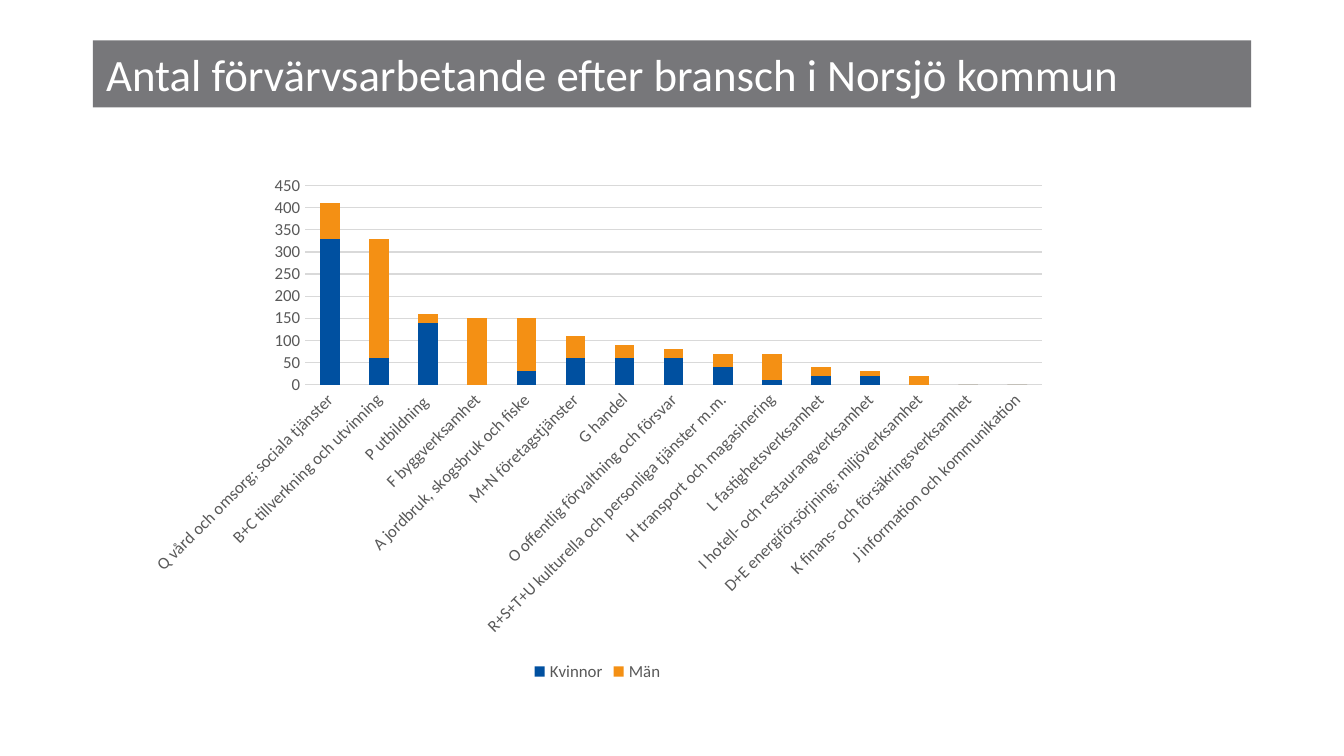
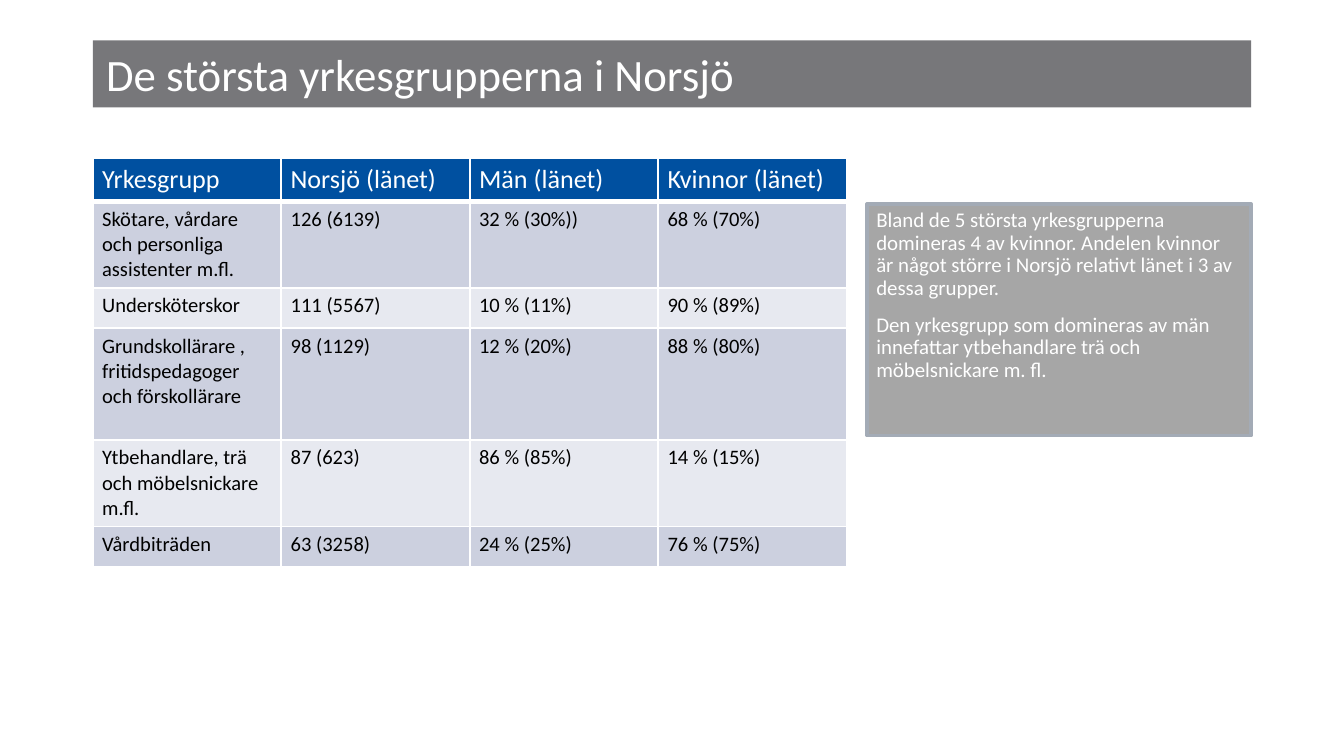
"""Build two slides on employment by industry and occupation in Norsjö."""
from lxml import etree
from pptx import Presentation
from pptx.chart.data import CategoryChartData
from pptx.dml.color import RGBColor
from pptx.enum.chart import XL_CHART_TYPE, XL_LEGEND_POSITION, XL_TICK_MARK
from pptx.enum.text import MSO_ANCHOR, MSO_AUTO_SIZE, PP_ALIGN
from pptx.oxml.ns import qn
from pptx.util import Inches, Pt

STACKED = XL_CHART_TYPE.COLUMN_STACKED
BOTTOM = XL_LEGEND_POSITION.BOTTOM
NO_TICK = XL_TICK_MARK.NONE
MIDDLE, TOP = MSO_ANCHOR.MIDDLE, MSO_ANCHOR.TOP
NO_FIT = MSO_AUTO_SIZE.NONE
LEFT = PP_ALIGN.LEFT

COLORS = {
    "band": "77777A", "blue": "0050A0", "orange": "F49014",
    "white": "FFFFFF", "black": "000000", "label": "595959", "grid": "D9D9D9",
    "odd": "CCD0DF", "even": "E7E9F0", "note": "A6A6A6", "edge": "A3ABB6",
}
FONT = "Calibri"
MARGIN, CONTENT = Inches(0.69), Inches(8.62)
INSET_X, INSET_Y = Inches(0.07), Inches(0.04)


def style(font, size, color):
    font.name = FONT
    font.size = Pt(size)
    font.color.rgb = RGBColor.from_string(COLORS[color])


def paint(fill, color):
    fill.solid()
    fill.fore_color.rgb = RGBColor.from_string(COLORS[color])


deck = Presentation()
deck.slide_width = Inches(10)
deck.slide_height = deck.slide_width * 9 // 16

pages = []
for layout, heading in (
    (5, "Antal förvärvsarbetande efter bransch i Norsjö kommun"),
    (1, "De största yrkesgrupperna i Norsjö"),
):
    page = deck.slides.add_slide(deck.slide_layouts[layout])
    title = page.shapes.title
    title.left, title.top = MARGIN, Inches(0.3)
    title.width, title.height = CONTENT, Inches(0.5)
    paint(title.fill, "band")
    frame = title.text_frame
    frame.auto_size = NO_FIT
    frame.vertical_anchor = MIDDLE
    para = frame.paragraphs[0]
    para.alignment = LEFT
    span = para.add_run()
    span.text = heading
    style(span.font, 24, "white")
    pages.append(page)
industry_page, occupation_page = pages

industries = [
    ("Q vård och omsorg; sociala tjänster", 330, 80),
    ("B+C tillverkning och utvinning", 60, 270),
    ("P utbildning ", 140, 20),
    ("F byggverksamhet", 0, 150),
    ("A jordbruk, skogsbruk och fiske", 30, 120),
    ("M+N företagstjänster", 60, 50),
    ("G handel", 60, 30),
    ("O offentlig förvaltning och försvar", 60, 20),
    ("R+S+T+U kulturella och personliga tjänster m.m.", 40, 30),
    ("H transport och magasinering", 10, 60),
    ("L fastighetsverksamhet", 20, 20),
    ("I hotell- och restaurangverksamhet", 20, 10),
    ("D+E energiförsörjning; miljöverksamhet", 0, 20),
    ("K finans- och försäkringsverksamhet", 0, 0),
    ("J information och kommunikation", 0, 0),
]
names, women, men = zip(*industries)
data = CategoryChartData(number_format="0")
data.categories = names
data.add_series("Kvinnor", women)
data.add_series("Män", men)
chart = industry_page.shapes.add_chart(STACKED, Inches(1), Inches(1.23),
                                       Inches(6.89), Inches(3.88), data).chart
style(chart.font, 10, "black")
chart.has_title = False
chart.has_legend = True
chart.legend.position = BOTTOM
chart.legend.include_in_layout = False
style(chart.legend.font, 9, "label")

plot = chart.plots[0]
plot.gap_width, plot.overlap = 150, 100
plot.vary_by_categories = False
for series, color in zip(plot.series, ("blue", "orange")):
    paint(series.format.fill, color)

industry_axis, count_axis = chart.category_axis, chart.value_axis
for axis in (industry_axis, count_axis):
    axis.major_tick_mark = axis.minor_tick_mark = NO_TICK
    style(axis.tick_labels.font, 9, "label")
industry_axis._element.txPr.bodyPr.set("rot", "-2700000")
count_axis.minimum_scale, count_axis.maximum_scale = 0, 450
count_axis.major_unit = 50
count_axis.tick_labels.number_format = "0"
count_axis.tick_labels.number_format_is_linked = False
count_axis.format.line.fill.background()
for line in (industry_axis.format.line, count_axis.major_gridlines.format.line):
    paint(line.fill, "grid")
    line.width = Pt(0.75)

occupations = [
    ("Yrkesgrupp", "Norsjö (länet)", "Män (länet)", "Kvinnor (länet)"),
    ("Skötare, vårdare och personliga assistenter m.fl.",
     "126 (6139)", "32 % (30%))", "68 % (70%)"),
    ("Undersköterskor", "111 (5567)", "10 % (11%)", "90 % (89%)"),
    ("Grundskollärare , fritidspedagoger och förskollärare",
     "98 (1129)", "12 % (20%)", "88 % (80%)"),
    ("Ytbehandlare, trä och möbelsnickare m.fl.",
     "87 (623)", "86 % (85%)", "14 % (15%)"),
    ("Vårdbiträden", "63 (3258)", "24 % (25%)", "76 % (75%)"),
]
row_heights = [0.3, 0.64, 0.3, 0.83, 0.64, 0.3]
table = occupation_page.shapes.add_table(
    len(occupations), 4, MARGIN, Inches(1.18),
    Inches(5.61), Inches(sum(row_heights))).table
for column in table.columns:
    column.width = Inches(5.61) // 4
for row, (texts, height) in enumerate(zip(occupations, row_heights)):
    table.rows[row].height = Inches(height)
    is_header = row == 0
    fill = "blue" if is_header else "odd" if row % 2 else "even"
    for col, text in enumerate(texts):
        cell = table.cell(row, col)
        cell.margin_left = cell.margin_right = INSET_X
        cell.margin_top = cell.margin_bottom = INSET_Y
        span = cell.text_frame.paragraphs[0].add_run()
        span.text = text
        style(span.font, 14 if is_header else 11, "white" if is_header else "black")
        span.font.bold = False
        properties = cell._tc.get_or_add_tcPr()
        for side in ("lnL", "lnR", "lnT", "lnB"):
            width = 3 if is_header and side == "lnB" else 1
            border = etree.SubElement(properties, qn("a:" + side), w=str(int(Pt(width))))
            solid = etree.SubElement(border, qn("a:solidFill"))
            etree.SubElement(solid, qn("a:srgbClr"), val=COLORS["white"])
        paint(cell.fill, fill)

note = occupation_page.placeholders[1]
note.left, note.top = Inches(6.45), Inches(1.52)
note.width, note.height = Inches(2.86), Inches(1.72)
paint(note.fill, "note")
paint(note.line.fill, "edge")
note.line.width = Pt(2)
frame = note.text_frame
frame.auto_size = NO_FIT
frame.vertical_anchor = TOP
frame.margin_left = frame.margin_right = INSET_X
frame.margin_top = frame.margin_bottom = INSET_Y
remarks = [
    "Bland de 5 största yrkesgrupperna domineras 4 av kvinnor. Andelen kvinnor "
    "är något större i Norsjö relativt länet i 3 av dessa grupper.",
    "Den yrkesgrupp som domineras av män innefattar ytbehandlare trä och "
    "möbelsnickare m. fl.",
]
for index, remark in enumerate(remarks):
    para = frame.add_paragraph() if index else frame.paragraphs[0]
    properties = para._p.get_or_add_pPr()
    properties.set("marL", "0")
    properties.set("indent", "0")
    etree.SubElement(properties, qn("a:buNone"))
    para.line_spacing = 0.9
    para.space_before = Pt(7.5 if index else 0)
    span = para.add_run()
    span.text = remark
    style(span.font, 11.2, "white")

deck.save("out.pptx")
